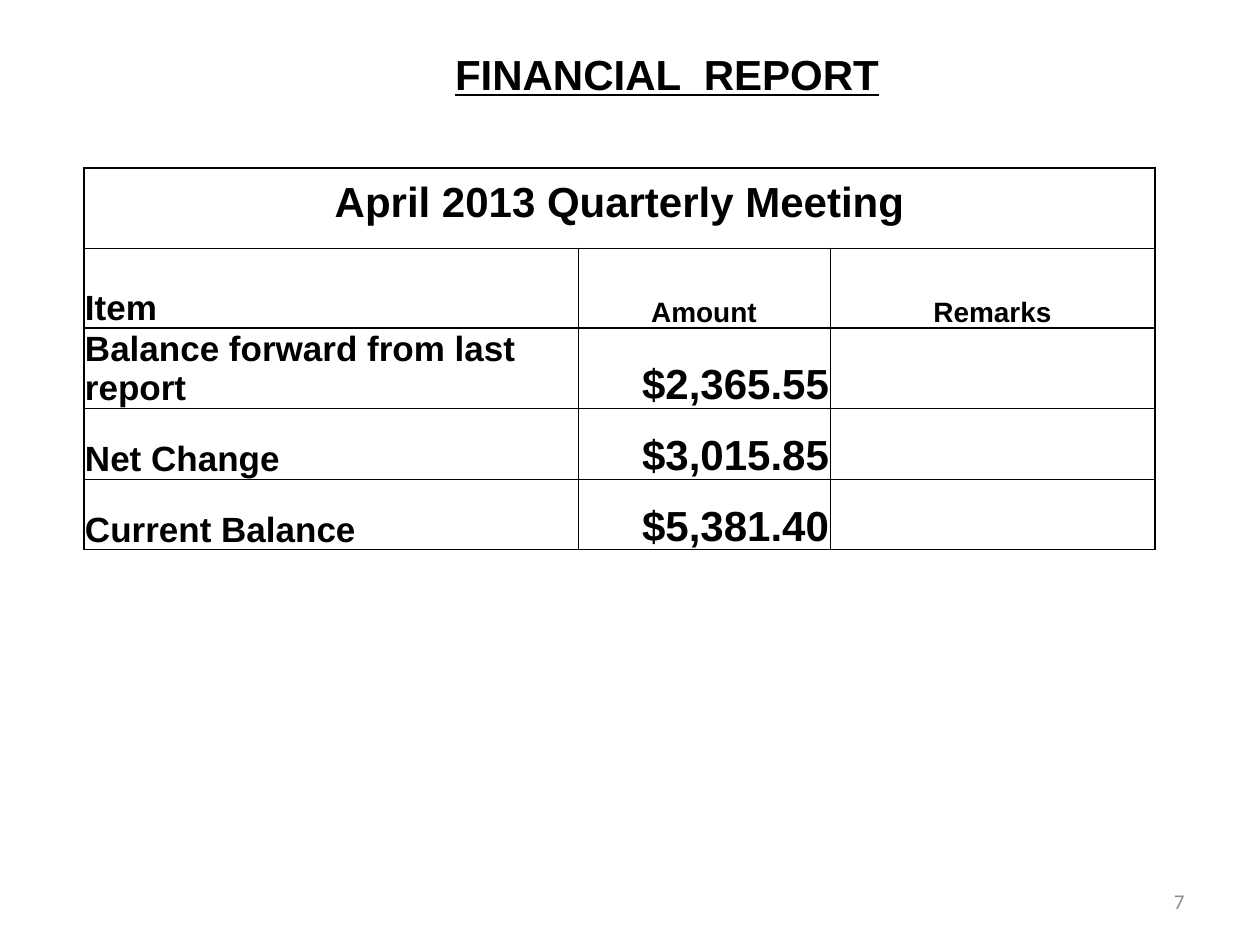
from dataclasses import dataclass

from lxml.etree import SubElement
from pptx import Presentation
from pptx.dml.color import RGBColor as RGB
from pptx.enum.text import MSO_ANCHOR as ANCHOR, PP_ALIGN as ALIGN
from pptx.oxml.ns import qn
from pptx.util import Emu, Pt


@dataclass(frozen=True)
class Theme:
    font: str = "Arial"
    number_font: str = "Calibri"
    ink: str = "000000"
    muted: str = "8C8C8C"
    paper: str = "FFFFFF"
    large: int = 24
    medium: int = 20
    small: int = 16
    tiny: int = 12
    thick: float = 1
    thin: float = 0.5


THEME = Theme()
PX_PER_INCH = 126
COL_WIDTHS = (494, 252, 325)
ROW_HEIGHTS = (80, 80, 80, 71, 71)
MEETING = "April 2013 Quarterly Meeting"
HEADINGS = ("Item", "Amount", "Remarks")
ENTRIES = (
    ("Balance forward from last report", "$2,365.55"),
    ("Net Change", "$3,015.85"),
    ("Current Balance", "$5,381.40"),
)


def px(n):
    return Emu(round(n * 914400 / PX_PER_INCH))


def write(tf, text, size, align=ALIGN.LEFT, font=THEME.font, color=THEME.ink,
          bold=True, underline=False):
    tf.word_wrap = True
    p = tf.paragraphs[0]
    p.alignment = align
    r = p.add_run()
    r.text = text
    r.font.name = font
    r.font.size = Pt(size)
    r.font.bold = bold
    r.font.underline = underline
    r.font.color.rgb = RGB.from_string(color)


def set_borders(cell, **widths):
    """Draw the cell's sides L, R, T and B, given in that order, in points."""
    tc_pr = cell._tc.get_or_add_tcPr()
    for side, width in widths.items():
        ln = SubElement(tc_pr, qn(f"a:ln{side}"), w=str(Pt(width)))
        fill = SubElement(ln, qn("a:solidFill"))
        SubElement(fill, qn("a:srgbClr"), val=THEME.ink)


def format_cells(table):
    """Thick outer sides, top and rule below the headings; thin lines elsewhere."""
    thick_rules = (0, 2)
    last_col = len(COL_WIDTHS) - 1

    def weight(is_thick):
        return THEME.thick if is_thick else THEME.thin

    for row in range(len(ROW_HEIGHTS)):
        for col in range(len(COL_WIDTHS)):
            cell = table.cell(row, col)
            set_borders(cell, L=weight(col == 0),
                        R=weight(col == last_col or row == 0),
                        T=weight(row in thick_rules),
                        B=weight(row + 1 in thick_rules))
            cell.fill.solid()
            cell.fill.fore_color.rgb = RGB.from_string(THEME.paper)
            cell.vertical_anchor = ANCHOR.BOTTOM
            cell.margin_left = cell.margin_right = cell.margin_top = px(1)
            cell.margin_bottom = 0


def add_title(slide, left, top, width, height):
    sp = slide.shapes.title
    sp.left, sp.top, sp.width, sp.height = map(px, (left, top, width, height))
    sp.text_frame.vertical_anchor = ANCHOR.TOP
    write(sp.text_frame, "FINANCIAL  REPORT", THEME.large, ALIGN.CENTER,
          underline=True)


def add_report(slide, left, top):
    frame = slide.shapes.add_table(
        len(ROW_HEIGHTS), len(COL_WIDTHS), px(left), px(top),
        px(sum(COL_WIDTHS)), px(sum(ROW_HEIGHTS)))
    table = frame.table
    table.first_row = table.horz_banding = False
    for column, width in zip(table.columns, COL_WIDTHS):
        column.width = px(width)
    for row, height in zip(table.rows, ROW_HEIGHTS):
        row.height = px(height)
    format_cells(table)

    banner = table.cell(0, 0)
    banner.merge(table.cell(0, len(COL_WIDTHS) - 1))
    banner.margin_bottom = px(22)
    write(banner.text_frame, MEETING, THEME.large, ALIGN.CENTER)

    for col, heading in enumerate(HEADINGS):
        size, align = ((THEME.small, ALIGN.CENTER) if col
                       else (THEME.medium, ALIGN.LEFT))
        write(table.cell(1, col).text_frame, heading, size, align)
    for row, (item, amount) in enumerate(ENTRIES, start=2):
        write(table.cell(row, 0).text_frame, item, THEME.medium)
        write(table.cell(row, 1).text_frame, amount, THEME.large, ALIGN.RIGHT)


def add_page_number(slide, left, top, width, height):
    sp = slide.shapes.add_textbox(*map(px, (left, top, width, height)))
    sp.text_frame.vertical_anchor = ANCHOR.MIDDLE
    write(sp.text_frame, "7", THEME.tiny, ALIGN.RIGHT, font=THEME.number_font,
          color=THEME.muted, bold=False)


def main():
    prs = Presentation()
    prs.slide_width, prs.slide_height = px(1260), px(945)
    slide = prs.slides.add_slide(prs.slide_layouts[5])
    add_report(slide, 84, 168)
    add_title(slide, 431, 42, 472, 63)
    add_page_number(slide, 903, 876, 294, 50)
    prs.save("out.pptx")


if __name__ == "__main__":
    main()
